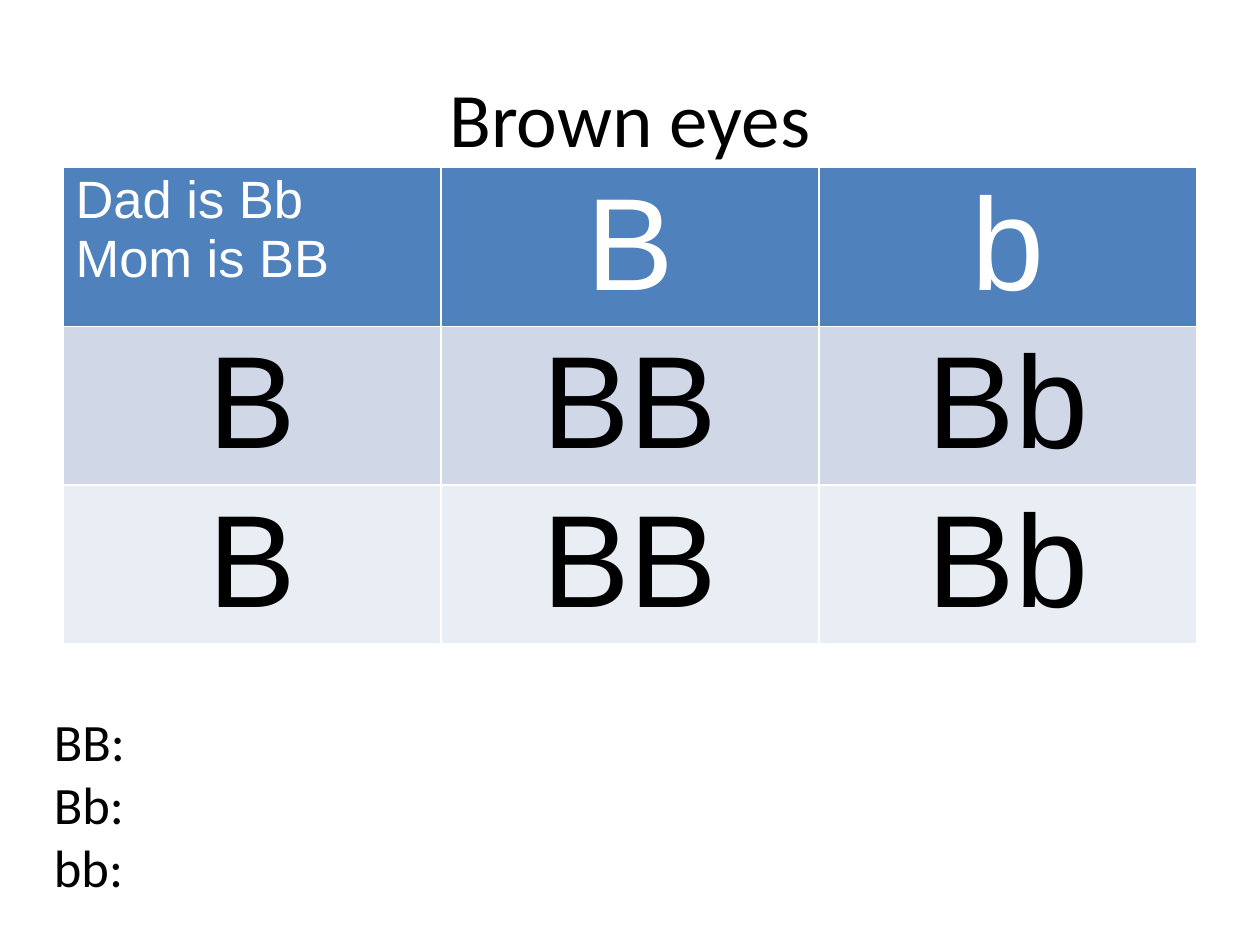
from dataclasses import dataclass

from pptx import Presentation
from pptx import util as u
from pptx.dml import color
from pptx.enum import text


@dataclass(frozen=True)
class Theme:
    heading_font: str = "Calibri"
    table_font: str = "Arial"
    dark: str = "000000"
    light: str = "FFFFFF"
    header_fill: str = "4F81BD"
    row_fills: tuple = ("D0D8E8", "E9EDF4")
    title_size: int = 44
    body_size: int = 30
    allele_size: int = 75


theme = Theme()


def write(frame, content, font, size, ink, align=text.PP_ALIGN.LEFT):
    """Fill a text frame, one paragraph per line of content."""
    for index, line in enumerate(content.split("\n")):
        para = frame.paragraphs[0] if index == 0 else frame.add_paragraph()
        para.alignment = align
        span = para.add_run()
        span.text = line
        span.font.name = font
        span.font.size = u.Pt(size)
        span.font.bold = False
        span.font.color.rgb = color.RGBColor.from_string(ink)


deck = Presentation()
deck.slide_width, deck.slide_height = u.Inches(10), u.Inches(7.5)
page = deck.slides.add_slide(deck.slide_layouts.get_by_name("Title Only"))

# Title
title = page.shapes.title
title.left, title.top = u.Inches(0.5), u.Inches(0.3)
title.width, title.height = u.Inches(9), u.Inches(1.25)
title.text_frame.vertical_anchor = text.MSO_ANCHOR.MIDDLE
write(title.text_frame, "Brown eyes", font=theme.heading_font,
      size=theme.title_size, ink=theme.dark, align=text.PP_ALIGN.CENTER)

# Punnett square
crosses = [
    ["Dad is Bb\nMom is BB", "B", "b"],
    ["B", "BB", "Bb"],
    ["B", "BB", "Bb"],
]
row_height = 1.26
square = page.shapes.add_table(
    3, 3, u.Inches(0.5), u.Inches(1.33), u.Inches(9), u.Inches(3 * row_height)
).table
fills = (theme.header_fill, *theme.row_fills)
for row, (genotypes, fill) in enumerate(zip(crosses, fills)):
    for column, genotype in enumerate(genotypes):
        cell = square.cell(row, column)
        cell.fill.solid()
        cell.fill.fore_color.rgb = color.RGBColor.from_string(fill)
        cell.margin_top = cell.margin_bottom = u.Inches(0.03)
        is_corner = row == column == 0
        write(cell.text_frame, genotype, font=theme.table_font,
              size=theme.body_size if is_corner else theme.allele_size,
              ink=theme.light if row == 0 else theme.dark,
              align=text.PP_ALIGN.LEFT if is_corner else text.PP_ALIGN.CENTER)

# Genotype tally
box = page.shapes.add_textbox(
    u.Inches(0.33), u.Inches(5.58), u.Inches(3.5), u.Inches(1.62))
box.text_frame.word_wrap = True
box.text_frame.auto_size = text.MSO_AUTO_SIZE.SHAPE_TO_FIT_TEXT
write(box.text_frame, "BB:\nBb:\nbb:", font=theme.heading_font,
      size=theme.body_size, ink=theme.dark)

deck.save("out.pptx")
